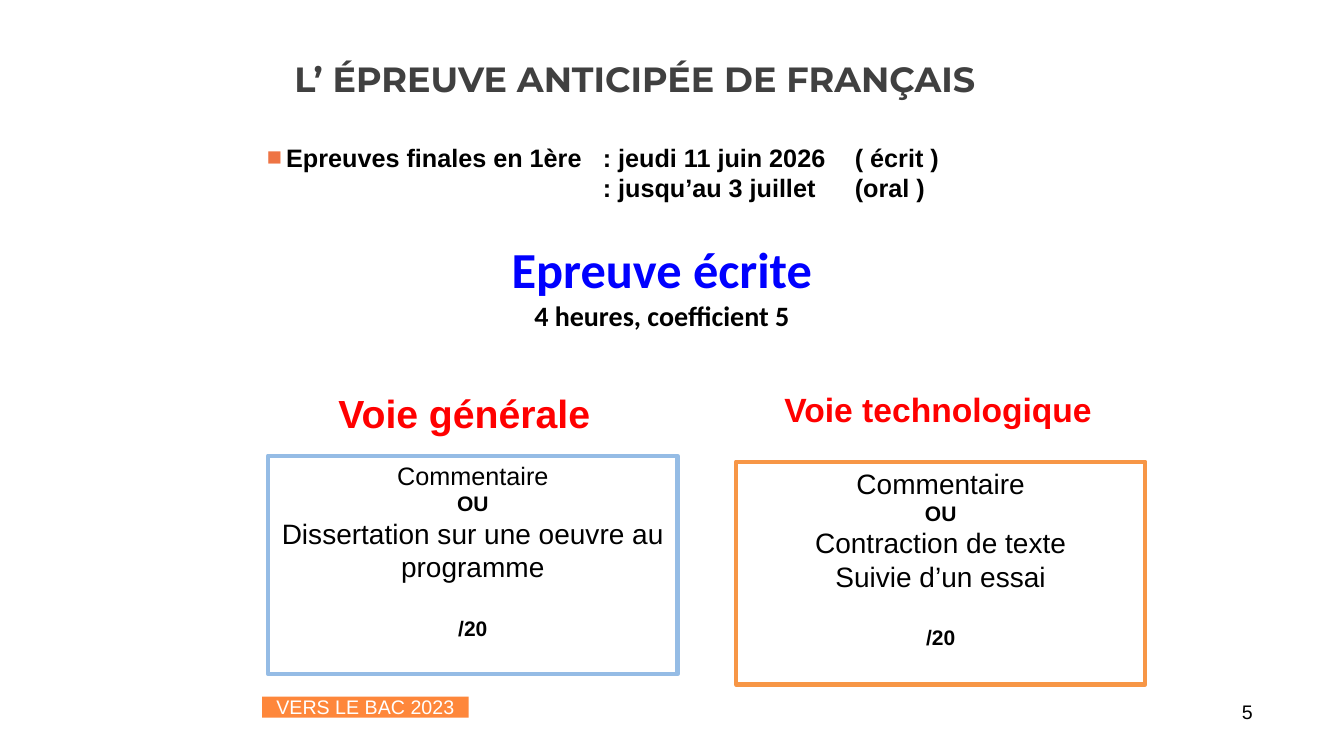
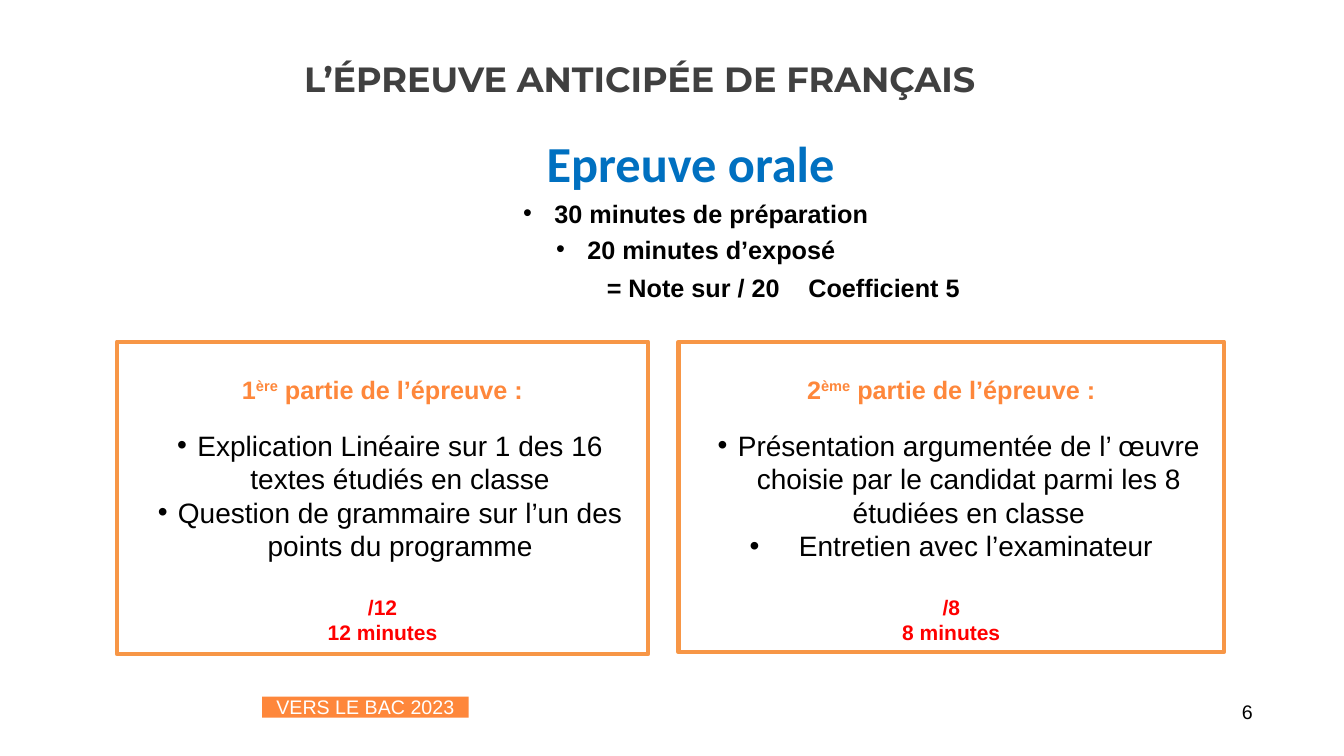
from lxml import etree
from pptx import Presentation
from pptx.dml.color import RGBColor
from pptx.enum.shapes import MSO_SHAPE
from pptx.enum.text import MSO_ANCHOR, PP_ALIGN
from pptx.oxml.ns import qn
from pptx.util import Inches, Pt

LEFT, CENTER, RIGHT = PP_ALIGN.LEFT, PP_ALIGN.CENTER, PP_ALIGN.RIGHT
TOP, MIDDLE = MSO_ANCHOR.TOP, MSO_ANCHOR.MIDDLE
RECTANGLE = MSO_SHAPE.RECTANGLE

BLACK = RGBColor(0x00, 0x00, 0x00)
WHITE = RGBColor(0xFF, 0xFF, 0xFF)
GRAY = RGBColor(0x40, 0x40, 0x40)
RED = RGBColor(0xFF, 0x00, 0x00)
BLUE = RGBColor(0x00, 0x00, 0xFF)
OCEAN = RGBColor(0x00, 0x70, 0xC0)
SKY = RGBColor(0x95, 0xBC, 0xE5)
ORANGE = RGBColor(0xFE, 0x87, 0x3B)
AMBER = RGBColor(0xF7, 0x96, 0x46)
CORAL = RGBColor(0xEE, 0x74, 0x44)

WIDTH, HEIGHT = Inches(13.33), Inches(7.5)
BLANK_LAYOUT = 6
SMALL, BODY, LARGE = 15, 18, 20
GAP_SMALL, GAP_LARGE = 17, 23


def area(left, top, width, height):
    """Turn percentages of the slide into lengths."""
    return (round(WIDTH * left / 100), round(HEIGHT * top / 100),
            round(WIDTH * width / 100), round(HEIGHT * height / 100))


# Text
def add_bullet(properties, symbol, color):
    fill = etree.SubElement(properties, qn("a:buClr"))
    etree.SubElement(fill, qn("a:srgbClr"), val=str(color))
    etree.SubElement(properties, qn("a:buFont"), typeface="Arial")
    etree.SubElement(properties, qn("a:buChar"), char=symbol)


def add_text(frame, text, size=BODY, color=BLACK, bold=False, font="Arial",
             align=LEFT, before=0, margin=0, hang=0, bullet=None,
             bullet_color=BLACK, tab=None, raised=None):
    """Add a paragraph; the part named by raised is set as superscript."""
    paragraph = frame.paragraphs[0]
    if paragraph.runs:
        paragraph = frame.add_paragraph()
    properties = paragraph._p.get_or_add_pPr()
    properties.set("marL", str(Inches(margin)))
    properties.set("indent", str(-Inches(hang)))
    if bullet:
        add_bullet(properties, bullet, bullet_color)
    if tab:
        tabs = etree.SubElement(properties, qn("a:tabLst"))
        etree.SubElement(tabs, qn("a:tab"), pos=str(Inches(tab)), algn="l")
    paragraph.alignment = align
    if before:
        paragraph.space_before = Pt(before)
    for part in text.partition(raised) if raised else (text,):
        run = paragraph.add_run()
        run.text = part
        run.font.name, run.font.size = font, Pt(size)
        run.font.bold, run.font.color.rgb = bold, color
        if raised and part == raised:
            run._r.get_or_add_rPr().set("baseline", "30000")


def text_area(slide, place, anchor=TOP):
    frame = slide.shapes.add_textbox(*area(*place)).text_frame
    frame.word_wrap = True
    frame.vertical_anchor = anchor
    return frame


# Rectangles
def panel(slide, place, fill=WHITE, border=None, inset=0.05, anchor=TOP):
    shape = slide.shapes.add_shape(RECTANGLE, *area(*place))
    shape.shadow.inherit = False
    shape.fill.solid()
    shape.fill.fore_color.rgb = fill
    if border is None:
        shape.line.fill.background()
    else:
        shape.line.color.rgb = border
        shape.line.width = Pt(3)
    frame = shape.text_frame
    frame.word_wrap = True
    frame.vertical_anchor = anchor
    frame.margin_top = Inches(inset)
    return frame


# Shared slide frame
def new_slide(deck, title, number):
    slide = deck.slides.add_slide(deck.slide_layouts[BLANK_LAYOUT])
    heading = text_area(slide, (8.7, 4, 64.59, 12.8), MIDDLE)
    add_text(heading, title, size=25, color=GRAY, bold=True,
             font="Montserrat", align=RIGHT)
    footer = panel(slide, (19.5, 92.13, 15.38, 2.8), ORANGE,
                   inset=0, anchor=MIDDLE)
    footer.margin_bottom = 0
    add_text(footer, "VERS LE BAC 2023", size=14, color=WHITE, align=CENTER)
    page = text_area(slide, (91.67, 91.87, 4.95, 4.53))
    add_text(page, number, size=14)
    return slide


# Content blocks
def track(slide, name, name_size, name_place, place, border, first_size, choices):
    add_text(text_area(slide, name_place), name, size=name_size,
             color=RED, bold=True, align=CENTER)
    frame = panel(slide, place, border=border)
    add_text(frame, "Commentaire", size=first_size, align=CENTER)
    add_text(frame, "OU", size=SMALL, bold=True, align=CENTER)
    for choice in choices:
        add_text(frame, choice, size=LARGE, align=CENTER)
    add_text(frame, "/20", size=SMALL, bold=True, align=CENTER,
             before=GAP_LARGE)


def oral_part(slide, place, heading, ordinal, tasks, results):
    frame = panel(slide, place, border=AMBER, inset=0.32)
    add_text(frame, heading, color=ORANGE, bold=True, align=CENTER,
             raised=ordinal)
    for index, (task, margin, hang) in enumerate(tasks):
        add_text(frame, task, size=LARGE, align=CENTER, bullet="•",
                 margin=margin, hang=hang, before=0 if index else GAP_SMALL)
    for index, result in enumerate(results):
        add_text(frame, result, size=SMALL, color=RED, bold=True,
                 align=CENTER, before=0 if index else GAP_LARGE)


def written_exam(deck):
    slide = new_slide(deck, "L’ ÉPREUVE ANTICIPÉE DE FRANÇAIS", "5")

    # Dates
    finals = text_area(slide, (19.13, 18.13, 25.5, 9.3))
    add_text(finals, "Epreuves finales en 1ère", bold=True, margin=0.19,
             hang=0.19, bullet="■", bullet_color=CORAL)
    dates = text_area(slide, (44.11, 18.13, 30, 9.3))
    for date in (": jeudi 11 juin 2026\t( écrit )",
                 ": jusqu’au 3 juillet\t(oral )"):
        add_text(dates, date, bold=True, tab=2.42)

    # Exam and its two tracks
    exam = text_area(slide, (37.06, 30.8, 24.38, 14))
    add_text(exam, "Epreuve écrite", size=36, color=BLUE, bold=True,
             font="Calibri", align=CENTER)
    add_text(exam, "4 heures, coefficient 5", size=LARGE, bold=True,
             font="Calibri", align=CENTER)
    track(slide, "Voie générale", 28, (19.13, 50.8, 30.83, 7.6),
          (19.95, 60.27, 30.46, 28.93), SKY, BODY,
          ["Dissertation sur une oeuvre au programme"])
    track(slide, "Voie technologique", 24, (54.76, 50.8, 30.08, 6.8),
          (54.76, 61.07, 30.46, 29.47), AMBER, LARGE,
          ["Contraction de texte", "Suivie d’un essai"])


def oral_exam(deck):
    slide = new_slide(deck, "L’ÉPREUVE ANTICIPÉE DE FRANÇAIS", "6")

    # Exam and its timing
    exam = text_area(slide, (17.55, 16.8, 64.67, 18.53))
    add_text(exam, "Epreuve orale", size=36, color=OCEAN, bold=True,
             font="Calibri", align=CENTER, margin=0.4)
    for step in ("30 minutes de préparation", "20 minutes d’exposé"):
        add_text(exam, step, bold=True, align=CENTER, before=4,
                 margin=0.81, hang=0.31, bullet="•")
    mark = text_area(slide, (44.41, 35.33, 31.5, 5.3))
    add_text(mark, "= Note sur / 20\tCoefficient 5", bold=True, tab=2.19)

    # Two parts
    oral_part(slide, (8.7, 45.2, 39.53, 41.33),
              "1ère partie de l’épreuve :", "ère",
              [("Explication Linéaire sur 1 des 16 textes étudiés en classe",
                0.35, 0.2),
               ("Question de grammaire sur l’un des points du programme",
                0.35, 0.2)],
              ["/12", "12 minutes"])
    oral_part(slide, (50.49, 45.2, 40.58, 41.07),
              "2ème partie de l’épreuve :", "ème",
              [("Présentation argumentée de l’ œuvre choisie par le candidat "
                "parmi les 8 étudiées en classe", 0.35, 0.2),
               ("Entretien avec l’examinateur", 0.49, 0.49)],
              ["/8", "8 minutes"])


def main():
    deck = Presentation()
    deck.slide_width, deck.slide_height = WIDTH, HEIGHT
    written_exam(deck)
    oral_exam(deck)
    deck.save("out.pptx")


if __name__ == "__main__":
    main()
